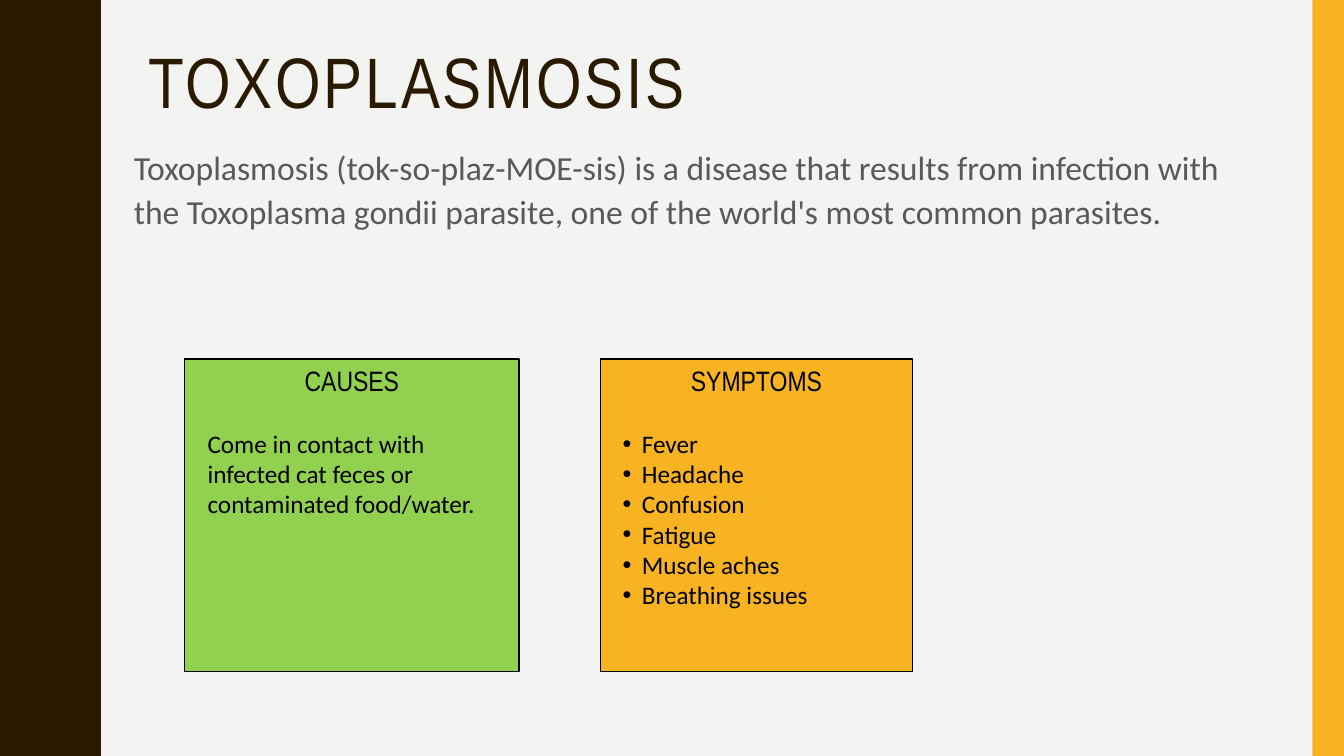
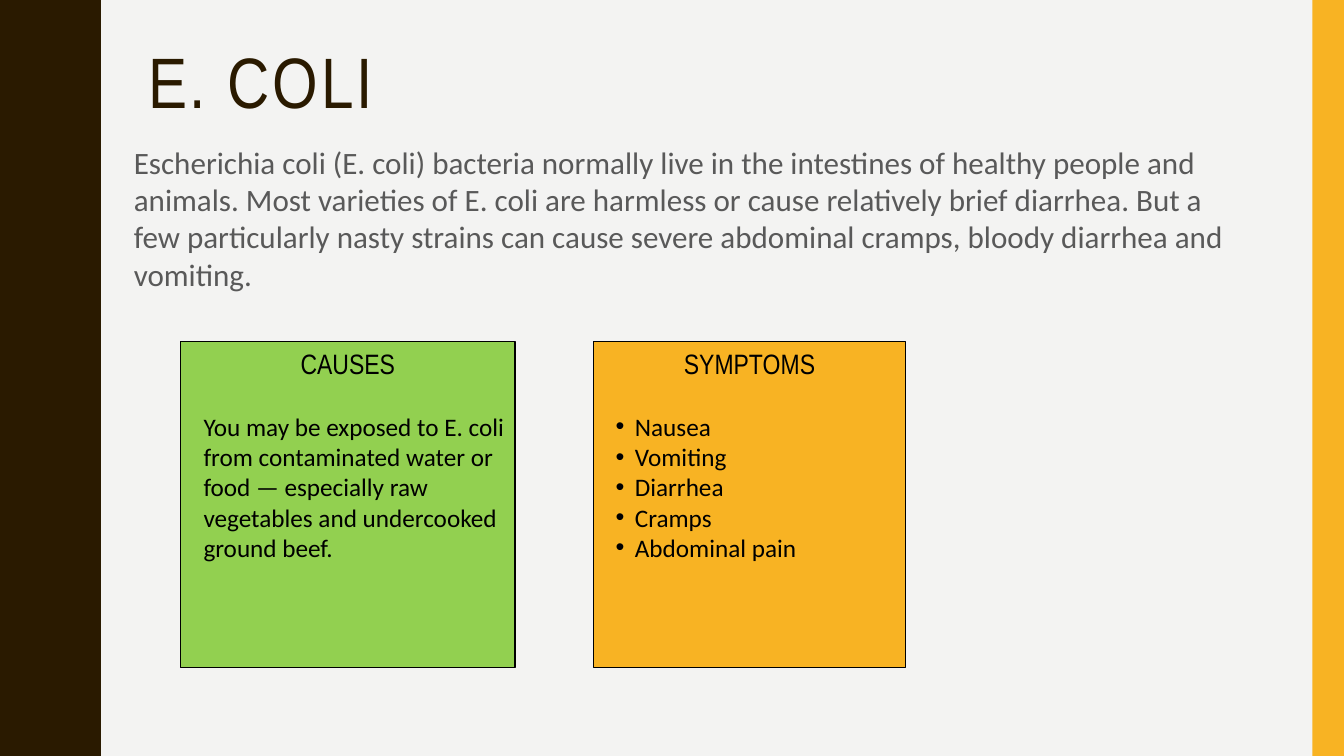
from dataclasses import dataclass

from lxml import etree
from pptx import Presentation
from pptx import util as u
from pptx.dml.color import RGBColor
from pptx.enum import shapes, text
from pptx.oxml.ns import qn

HUES = {
    "paper": "F3F3F2", "brown": "2A1A00", "gold": "F8B323",
    "green": "92D050", "grey": "595959", "black": "000000",
}
HEAD, BODY = "Arial Narrow", "Calibri"
WIDE, HIGH = 13.333, 7.5

# Edge of one half wave: (across, down) in inches; it is mirrored and repeated
HALF = [(0.78, 0), (0.78, 0.07), (0.79, 0.14), (0.8, 0.2), (0.81, 0.25),
        (0.83, 0.29), (0.85, 0.33), (0.87, 0.38), (0.89, 0.42), (0.91, 0.46),
        (0.93, 0.5), (0.95, 0.55), (0.96, 0.61), (0.97, 0.68), (0.97, 0.75)]
WAVES = 5


@dataclass
class Box:
    """A frame in percent of the slide's width and height."""
    left: float
    top: float
    width: float
    height: float

    def emu(self) -> list[int]:
        return [u.Inches(part * side / 100) for part, side in
                zip((self.left, self.top, self.width, self.height),
                    (WIDE, HIGH, WIDE, HIGH))]


@dataclass
class Card:
    label: str
    hue: str
    width: float
    lines: list[str]
    dots: bool = False


@dataclass
class Topic:
    title: str
    intro: str
    size: float     # points of the intro
    lead: float     # line spacing of the intro
    left: float     # the row of cards, in percent of the slide
    top: float
    height: float
    gap: float
    cards: list[Card]


def causes(line: str) -> Card:
    return Card("CAUSES", "green", 24.9, [line])


def symptoms(*lines: str) -> Card:
    return Card("SYMPTOMS", "gold", 23.18, list(lines), True)


TITLE = Box(10.28, 5.6, 83.48, 12.8)
INTRO = Box(9.22, 18.27, 83.48, 21.47)
EDGE = Box(97.65, 0, 2.35, 100)

TOPICS = [
    Topic("TOXOPLASMOSIS",
          "Toxoplasmosis (tok-so-plaz-MOE-sis) is a disease that results from "
          "infection with the Toxoplasma gondii parasite, one of the world's "
          "most common parasites.",
          24, 1.1, 13.73, 47.47, 41.33, 6.07,
          [causes("Come in contact with infected cat feces or contaminated "
                  "food/water."),
           symptoms("Fever", "Headache", "Confusion", "Fatigue",
                    "Muscle aches", "Breathing issues")]),
    Topic("E. COLI",
          "Escherichia coli (E. coli) bacteria normally live in the intestines "
          "of healthy people and animals. Most varieties of E. coli are "
          "harmless or cause relatively brief diarrhea. But a few particularly "
          "nasty strains can cause severe abdominal cramps, bloody diarrhea "
          "and vomiting.",
          22.2, 1, 13.43, 45.2, 43.07, 5.85,
          [causes("You may be exposed to E. coli from contaminated water or "
                  "food — especially raw vegetables and undercooked ground "
                  "beef."),
           symptoms("Nausea", "Vomiting", "Diarrhea", "Cramps",
                    "Abdominal pain")]),
]


def color(name: str) -> RGBColor:
    return RGBColor.from_string(HUES[name])


def write(frame, words: str, *, font: str, size: float, hue: str = "black",
          lead: float = 1, before: float = 0, after: float = 0,
          center: bool = False, track: int = 0, margin: float = 0,
          indent: float = 0, dot: bool = False) -> None:
    """Add one formatted paragraph, filling the empty first one if there is one."""
    frame.word_wrap = True
    frame.vertical_anchor = text.MSO_ANCHOR.TOP
    para = frame.paragraphs[0]
    if para.runs:
        para = frame.add_paragraph()
    para.alignment = text.PP_ALIGN.CENTER if center else text.PP_ALIGN.LEFT
    para.line_spacing = lead
    para.space_before, para.space_after = u.Pt(before), u.Pt(after)
    run = para.add_run()
    run.text = words
    run.font.name, run.font.size = font, u.Pt(size)
    run.font.color.rgb = color(hue)
    if track:
        run.font._element.set("spc", str(track * 100))
    props = para._p.get_or_add_pPr()
    props.set("marL", str(u.Inches(margin)))
    props.set("indent", str(u.Inches(indent)))
    if dot:
        etree.SubElement(props, qn("a:buFont")).set("typeface", "Arial")
        etree.SubElement(props, qn("a:buChar")).set("char", "•")


def paint(shape, hue: str, line: bool = False) -> None:
    shape.shadow.inherit = False
    shape.fill.solid()
    shape.fill.fore_color.rgb = color(hue)
    if line:
        shape.line.color.rgb = color("black")
        shape.line.width = u.Pt(1)
    else:
        shape.line.fill.background()


def block(slide, box: Box, hue: str, line: bool = False):
    shape = slide.shapes.add_shape(shapes.MSO_SHAPE.RECTANGLE, *box.emu())
    paint(shape, hue, line)
    return shape


def frame(slide) -> None:
    """Wavy band on the left, plain band on the right."""
    step = HIGH / WAVES
    wave = HALF + [(x, step - y) for x, y in reversed(HALF[:-1])]
    edge = [(x, y + turn * step) for turn in range(WAVES) for x, y in wave]
    pen = slide.shapes.build_freeform(0, 0, scale=u.Inches(1))
    pen.add_line_segments(edge + [(0, HIGH)], close=True)
    paint(pen.convert_to_shape(), "brown")
    block(slide, EDGE, "gold")


def panel(slide, box: Box, card: Card) -> None:
    body = block(slide, box, card.hue, line=True).text_frame
    write(body, card.label, font=HEAD, size=20, center=True, after=22)
    margin, indent = (0.31, -0.19) if card.dots else (0.13, 0)
    for line in card.lines:
        write(body, line, font=BODY, size=18, margin=margin, indent=indent,
              dot=card.dots)


def draw(slide, topic: Topic) -> None:
    frame(slide)
    # Title and introduction
    title = slide.shapes.add_textbox(*TITLE.emu()).text_frame
    write(title, topic.title, font=HEAD, size=51, hue="brown", lead=0.9, track=2)
    intro = slide.shapes.add_textbox(*INTRO.emu()).text_frame
    write(intro, topic.intro, font=BODY, size=topic.size, hue="grey",
          lead=topic.lead, before=7)
    # Row of cards
    left = topic.left
    for card in topic.cards:
        panel(slide, Box(left, topic.top, card.width, topic.height), card)
        left += card.width + topic.gap


def main() -> None:
    deck = Presentation()
    deck.slide_width, deck.slide_height = u.Inches(WIDE), u.Inches(HIGH)
    back = deck.slide_master.background.fill
    back.solid()
    back.fore_color.rgb = color("paper")
    for topic in TOPICS:
        draw(deck.slides.add_slide(deck.slide_layouts[6]), topic)
    deck.save("out.pptx")


if __name__ == "__main__":
    main()
